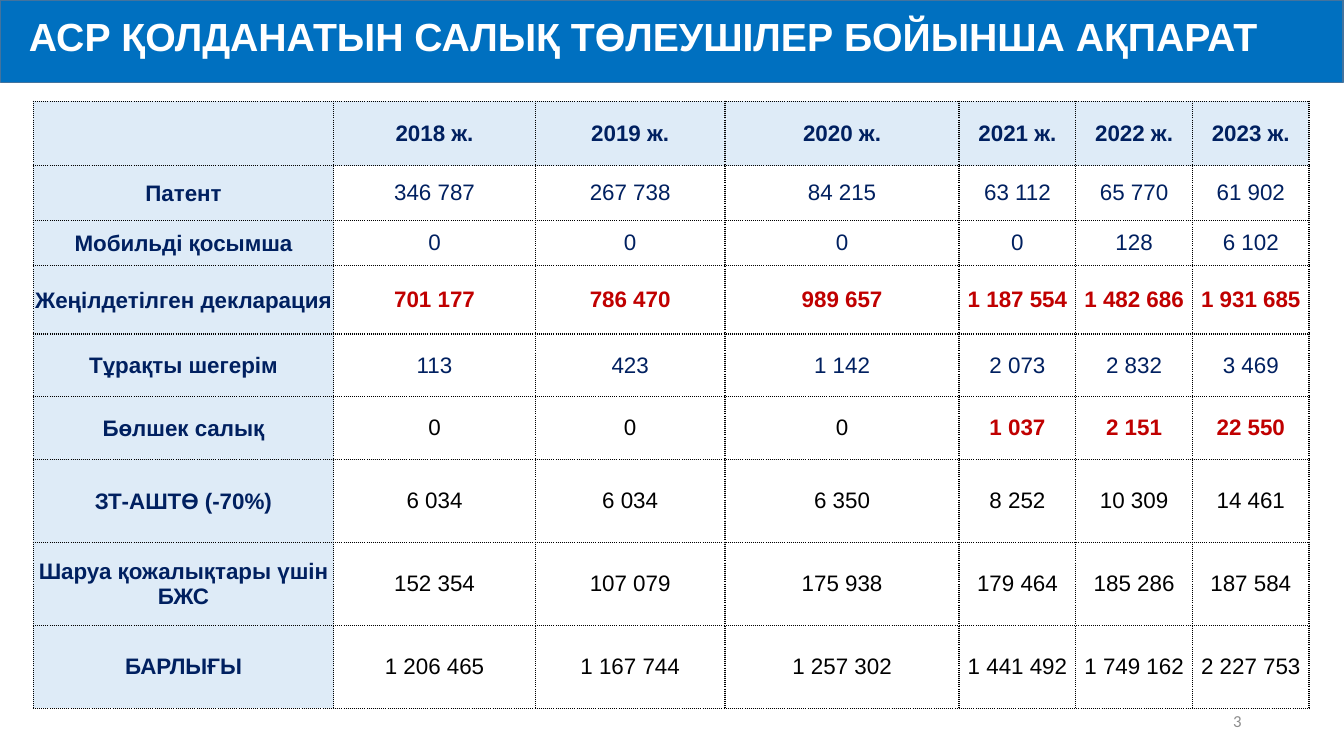
import pptx
import pptx.dml.color
import pptx.enum.shapes
import pptx.enum.text
import pptx.oxml
import pptx.oxml.ns
import pptx.util

Cm, Pt = pptx.util.Cm, pptx.util.Pt
ALIGN = pptx.enum.text.PP_ALIGN
MIDDLE = pptx.enum.text.MSO_ANCHOR.MIDDLE

TITLE = "АСР ҚОЛДАНАТЫН САЛЫҚ ТӨЛЕУШІЛЕР БОЙЫНША АҚПАРАТ"
PAGE_NUMBER = "3"
YEARS = ["2018 ж.", "2019 ж.", "2020 ж.", "2021 ж.", "2022 ж.", "2023 ж."]
# label, values, colour of ordinary values, first highlighted value (6 = none)
REGIMES = [
    ("Патент", ["346 787", "267 738", "84 215", "63 112", "65 770", "61 902"], "navy", 6),
    ("Мобильді қосымша", ["0", "0", "0", "0", "128", "6 102"], "navy", 6),
    ("Жеңілдетілген декларация",
     ["701 177", "786 470", "989 657", "1 187 554", "1 482 686", "1 931 685"], "navy", 0),
    ("Тұрақты шегерім", ["113", "423", "1 142", "2 073", "2 832", "3 469"], "navy", 6),
    ("Бөлшек салық", ["0", "0", "0", "1 037", "2 151", "22 550"], "black", 3),
    ("ЗТ-АШТӨ (-70%)", ["6 034", "6 034", "6 350", "8 252", "10 309", "14 461"], "black", 6),
    ("Шаруа қожалықтары үшін БЖС",
     ["152 354", "107 079", "175 938", "179 464", "185 286", "187 584"], "black", 6),
    ("БАРЛЫҒЫ",
     ["1 206 465", "1 167 744", "1 257 302", "1 441 492", "1 749 162", "2 227 753"], "black", 6),
]
COLUMN_WIDTHS = [7.57, 5.08, 4.78, 5.9, 2.94, 2.94, 2.94]
ROW_HEIGHTS = [1.63, 1.38, 1.14, 1.72, 1.58, 1.58, 2.09, 2.09, 2.09]

THEME = {
    "blue": "0070C0", "outline": "43739E", "pale": "DEEBF7", "white": "FFFFFF",
    "navy": "002060", "red": "C00000", "black": "000000", "grey": "8C8C8C",
    "title_size": 28, "table_size": 16, "number_size": 12,
    "font": "Arial", "number_font": "Calibri",
}


def colour(key):
    return pptx.dml.color.RGBColor.from_string(THEME[key])


def write(frame, text, size, ink, bold=False, font="font", **paragraph_format):
    paragraph = frame.paragraphs[0]
    for attribute, value in paragraph_format.items():
        setattr(paragraph, attribute, value)
    run = paragraph.add_run()
    run.text = text
    font_format = {"name": THEME[font], "size": Pt(THEME[size]), "bold": bold}
    for attribute, value in font_format.items():
        setattr(run.font, attribute, value)
    run.font.color.rgb = colour(ink)
    return paragraph


def add_text_frame(slide, left, top, width, height):
    frame = slide.shapes.add_textbox(Cm(left), Cm(top), Cm(width), Cm(height)).text_frame
    frame.word_wrap = True
    frame.vertical_anchor = MIDDLE
    return frame


def dot_borders(cell):
    properties = cell._tc.get_or_add_tcPr()
    for position, side in enumerate(("lnL", "lnR", "lnT", "lnB")):
        properties.insert(position, pptx.oxml.parse_xml(
            f'<a:{side} {pptx.oxml.ns.nsdecls("a")} w="{Pt(1)}"><a:solidFill>'
            f'<a:srgbClr val="{THEME["black"]}"/></a:solidFill>'
            f'<a:prstDash val="sysDot"/></a:{side}>'))


def fill_cell(cell, text, background, ink, bold, inset):
    cell_format = {"vertical_anchor": MIDDLE, "margin_left": inset, "margin_right": inset,
                   "margin_top": inset, "margin_bottom": 0}
    for attribute, value in cell_format.items():
        setattr(cell, attribute, value)
    cell.fill.solid()
    cell.fill.fore_color.rgb = colour(background)
    dot_borders(cell)
    if text:
        write(cell.text_frame, text, "table_size", ink, bold, alignment=ALIGN.CENTER)


def add_banner(slide):
    banner = slide.shapes.add_shape(
        pptx.enum.shapes.MSO_SHAPE.RECTANGLE, Cm(0.02), Cm(0), Cm(33.83), Cm(2.08))
    banner.shadow.inherit = False
    banner.fill.solid()
    banner.fill.fore_color.rgb = colour("blue")
    banner.line.color.rgb = colour("outline")
    banner.line.width = Pt(1)
    title = write(add_text_frame(slide, 0, 0.2, 33.83, 1.57), TITLE,
                  "title_size", "white", True, line_spacing=0.9)
    title._p.get_or_add_pPr().set("marL", str(Cm(0.48)))


def add_regime_table(slide):
    table = slide.shapes.add_table(
        len(ROW_HEIGHTS), len(COLUMN_WIDTHS), Cm(0.84), Cm(2.55),
        Cm(sum(COLUMN_WIDTHS)), Cm(sum(ROW_HEIGHTS))).table
    table.first_row = table.horz_banding = False
    for column, width in zip(table.columns, COLUMN_WIDTHS):
        column.width = Cm(width)
    for row, height in zip(table.rows, ROW_HEIGHTS):
        row.height = Cm(height)
    for c, heading in enumerate([""] + YEARS):
        fill_cell(table.cell(0, c), heading, "pale", "navy", True, 0)
    for r, (label, values, ink, highlight_from) in enumerate(REGIMES, 1):
        fill_cell(table.cell(r, 0), label, "pale", "navy", True, Cm(0.02))
        for c, value in enumerate(values):
            highlighted = c >= highlight_from
            fill_cell(table.cell(r, c + 1), value, "white",
                      "red" if highlighted else ink, highlighted, 0)


def main():
    deck = pptx.Presentation()
    deck.slide_width, deck.slide_height = Cm(33.87), Cm(19.05)
    slide = deck.slides.add_slide(deck.slide_layouts[6])
    add_banner(slide)
    add_regime_table(slide)
    write(add_text_frame(slide, 23.92, 17.65, 7.62, 1.02), PAGE_NUMBER,
          "number_size", "grey", font="number_font", alignment=ALIGN.RIGHT)
    deck.save("out.pptx")


if __name__ == "__main__":
    main()
